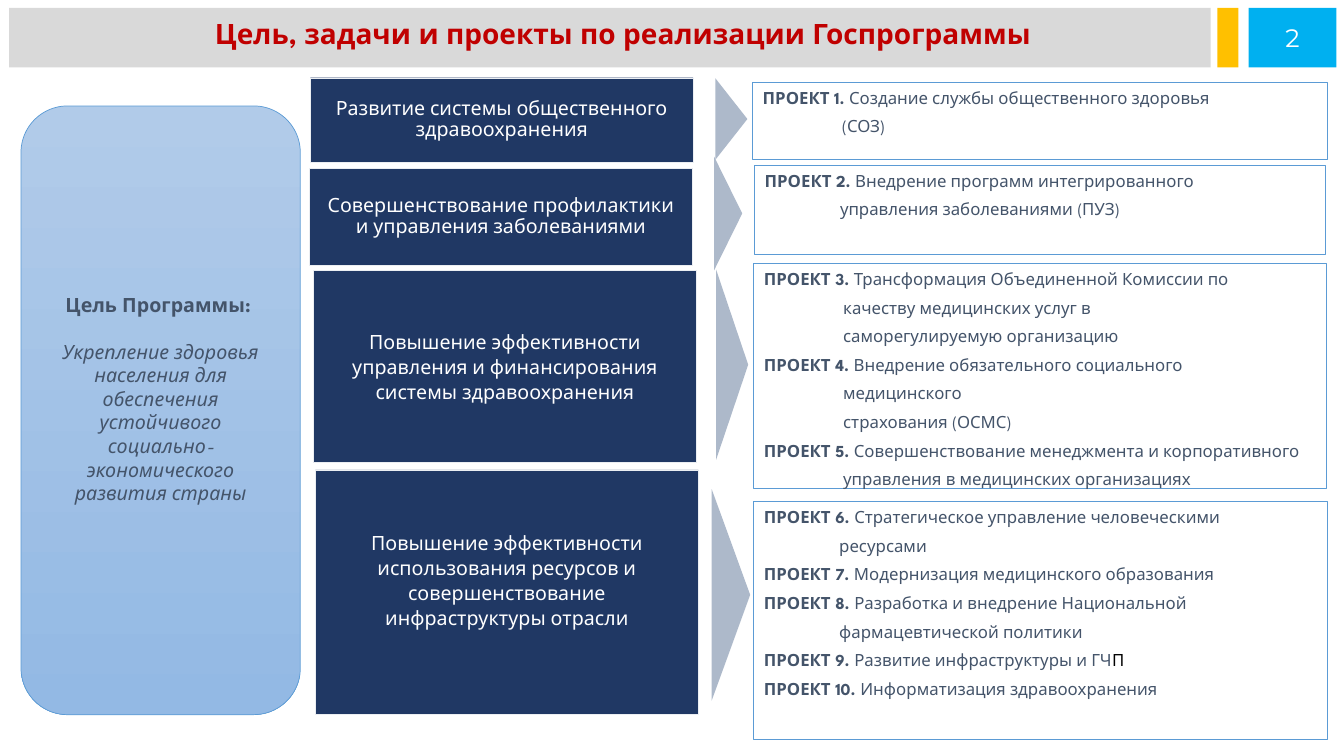
"""Build the slide with the goal, tasks and projects of the state health programme."""
import pptx
import pptx.dml.color
import pptx.enum.shapes
import pptx.enum.text
import pptx.util

Cm = pptx.util.Cm
Pt = pptx.util.Pt
RGBColor = pptx.dml.color.RGBColor
SHAPE = pptx.enum.shapes.MSO_SHAPE
ALIGN = pptx.enum.text.PP_ALIGN
ANCHOR = pptx.enum.text.MSO_ANCHOR

WHITE = RGBColor(0xFF, 0xFF, 0xFF)
BLACK = RGBColor(0x00, 0x00, 0x00)
GREY = RGBColor(0xD9, 0xD9, 0xD9)
RED = RGBColor(0xC0, 0x00, 0x00)
AMBER = RGBColor(0xFF, 0xC0, 0x00)
CYAN = RGBColor(0x00, 0xB0, 0xF0)
NAVY = RGBColor(0x20, 0x38, 0x64)
PALE = RGBColor(0xEB, 0xEE, 0xF2)
STEEL = RGBColor(0xAD, 0xB9, 0xCA)
BLUE = RGBColor(0x5B, 0x9B, 0xD5)
SLATE = RGBColor(0x44, 0x54, 0x6A)
GOAL_TOP = RGBColor(0xB1, 0xCB, 0xE9)
GOAL_BOTTOM = RGBColor(0x93, 0xB9, 0xE4)
FONT = "League Spartan"


def add_box(kind, left, top, width, height, fill=None, line=None, line_width=0.75):
    shape = slide.shapes.add_shape(kind, Cm(left), Cm(top), Cm(width), Cm(height))
    shape.shadow.inherit = False
    if fill is None:
        shape.fill.background()
    else:
        shape.fill.solid()
        shape.fill.fore_color.rgb = fill
    if line is None:
        shape.line.fill.background()
    else:
        shape.line.color.rgb = line
        shape.line.width = Pt(line_width)
    shape.text_frame.word_wrap = True
    return shape


def style_run(run, size, color, bold=False, italic=False, name=FONT):
    run.font.name = name
    run.font.size = Pt(size)
    run.font.color.rgb = color
    run.font.bold = bold
    run.font.italic = italic


presentation = pptx.Presentation()
presentation.slide_width = Cm(33.87)
presentation.slide_height = Cm(19.05)
slide = presentation.slides.add_slide(presentation.slide_layouts[5])

header = add_box(SHAPE.RECTANGLE, 0.23, 0.2, 30.28, 1.5, GREY)
title = slide.shapes.title
header.element.addnext(title.element)
title.left, title.top, title.width, title.height = Cm(0.84), Cm(0.46), Cm(29.72), Cm(0.94)
title.text_frame.text = "Цель, задачи и проекты по реализации Госпрограммы"
title.text_frame.auto_size = pptx.enum.text.MSO_AUTO_SIZE.NONE
title.text_frame.vertical_anchor = ANCHOR.TOP
heading = title.text_frame.paragraphs[0]
heading.alignment = ALIGN.CENTER
heading.line_spacing = 0.8
style_run(heading.runs[0], 20, RED, bold=True)

add_box(SHAPE.RECTANGLE, 30.68, 0.2, 0.53, 1.5, AMBER)
page = add_box(SHAPE.RECTANGLE, 31.47, 0.2, 2.21, 1.5, CYAN)
page.text_frame.text = "2"
page.text_frame.vertical_anchor = ANCHOR.MIDDLE
page.text_frame.paragraphs[0].alignment = ALIGN.CENTER
style_run(page.text_frame.paragraphs[0].runs[0], 18, WHITE, name="Montserrat")

goal = add_box(SHAPE.ROUNDED_RECTANGLE, 0.53, 2.67, 7.04, 15.34, line=BLUE, line_width=0.5)
goal.fill.gradient()
goal.fill.gradient_angle = 270
for stop, color in zip(goal.fill.gradient_stops, (GOAL_TOP, GOAL_BOTTOM)):
    stop.color.rgb = color
goal.text_frame.vertical_anchor = ANCHOR.MIDDLE
goal.text_frame.margin_bottom = Cm(0.72)
goal.text_frame.text = (
    "Цель Программы: \nУкрепление здоровья населения для обеспечения "
    "устойчивого социально-экономического развития страны"
)
goal_heading, goal_body = goal.text_frame.paragraphs
goal_heading.alignment = goal_body.alignment = ALIGN.CENTER
goal_heading.space_after = Pt(17)
style_run(goal_heading.runs[0], 14, SLATE, bold=True)
style_run(goal_body.runs[0], 14, SLATE, italic=True)

tasks = [
    (7.82, 1.96, 2.13, 0.9, 0.13, "Развитие системы общественного здравоохранения"),
    (7.8, 4.24, 2.44, 0.9, 0.13, "Совершенствование профилактики и управления заболеваниями"),
    (7.9, 6.81, 4.85, 1.06, 0.13,
     "Повышение эффективности управления и финансирования системы здравоохранения"),
    (7.95, 11.84, 6.15, 1.06, 0.76,
     "Повышение эффективности использования ресурсов и совершенствование инфраструктуры отрасли"),
]
for left, top, height, spacing, margin_bottom, text in tasks:
    task = add_box(SHAPE.RECTANGLE, left, top, 9.65, height, NAVY, PALE, 0.25)
    task.text_frame.text = text
    task.text_frame.vertical_anchor = ANCHOR.MIDDLE
    task.text_frame.margin_bottom = Cm(margin_bottom)
    paragraph = task.text_frame.paragraphs[0]
    paragraph.alignment = ALIGN.CENTER
    paragraph.line_spacing = spacing
    style_run(paragraph.runs[0], 14, WHITE)

arrows = [
    (18.43, 3.0, 2.06, 0.81),
    (18.35, 5.38, 2.87, 0.71),
    (18.45, 9.19, 4.8, 0.81),
    (18.42, 14.99, 5.33, 0.97),
]
for center_x, center_y, length, depth in arrows:
    arrow = add_box(SHAPE.ISOSCELES_TRIANGLE, center_x - length / 2, center_y - depth / 2,
                    length, depth, STEEL)
    arrow.rotation = 90

project_boxes = [
    (18.97, 2.08, 14.48, 1.93, 2.0, [
        ("ПРОЕКТ 1. ", "Создание службы общественного здоровья"),
        ("", "(СОЗ)"),
    ]),
    (19.02, 4.17, 14.38, 2.24, 1.9, [
        ("ПРОЕКТ 2. ", "Внедрение программ интегрированного"),
        ("", "управления заболеваниями (ПУЗ)"),
    ]),
    (19.0, 6.65, 14.43, 5.66, 2.0, [
        ("ПРОЕКТ 3. ", "Трансформация Объединенной Комиссии по"),
        ("", "качеству медицинских услуг в"),
        ("", "саморегулируемую организацию"),
        ("ПРОЕКТ 4. ", "Внедрение обязательного социального"),
        ("", "медицинского"),
        ("", "страхования (ОСМС)"),
        ("ПРОЕКТ 5. ", "Совершенствование менеджмента и корпоративного"),
        ("", "управления в медицинских организациях"),
    ]),
    (19.0, 12.65, 14.45, 5.99, 1.9, [
        ("ПРОЕКТ 6. ", "Стратегическое управление человеческими"),
        ("", "ресурсами"),
        ("ПРОЕКТ 7. ", "Модернизация медицинского образования"),
        ("ПРОЕКТ 8. ", "Разработка и внедрение Национальной"),
        ("", "фармацевтической политики"),
        ("ПРОЕКТ 9. ", "Развитие инфраструктуры и ГЧ", "П"),
        ("ПРОЕКТ 10. ", "Информатизация здравоохранения"),
    ]),
]
for left, top, width, height, indent, lines in project_boxes:
    box = add_box(SHAPE.RECTANGLE, left, top, width, height, line=BLUE)
    frame = box.text_frame
    frame.vertical_anchor = ANCHOR.TOP
    frame.text = "\n".join(label for label, *parts in lines)
    for paragraph, (label, *parts) in zip(frame.paragraphs, lines):
        paragraph.alignment = ALIGN.LEFT
        paragraph.space_before = paragraph.space_after = Pt(3)
        if label:
            style_run(paragraph.runs[0], 12, SLATE, bold=True)
        else:
            properties = paragraph._p.get_or_add_pPr()
            properties.set("marL", str(Cm(indent)))
        for part, color in zip(parts, (SLATE, BLACK)):
            run = paragraph.add_run()
            run.text = part
            style_run(run, 12, color)

presentation.save("out.pptx")
